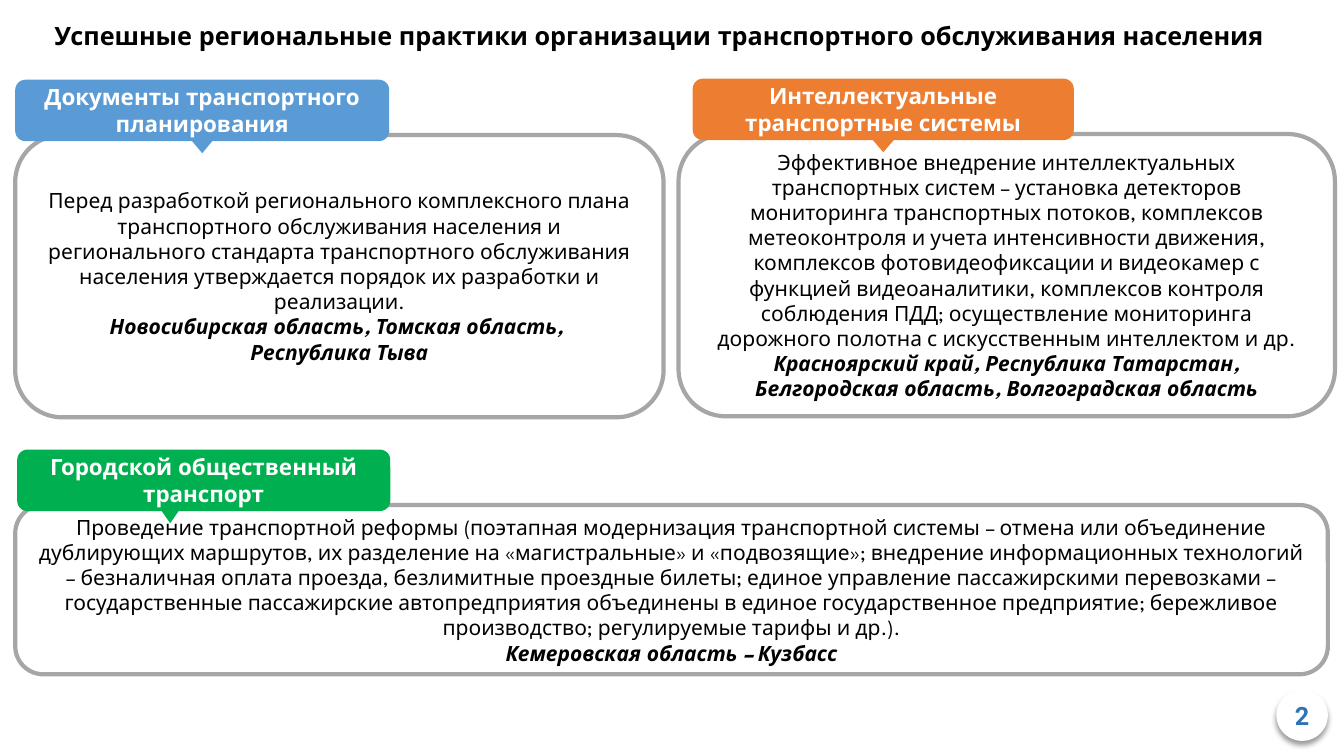
from copy import deepcopy

from lxml import etree
from pptx import Presentation
from pptx import util as u
from pptx.dml.color import RGBColor
from pptx.enum import shapes, text
from pptx.oxml import ns

THEME = {
    "font": "League Spartan", "number_font": "Roboto",
    "title": 18, "tag": 16, "body": 15, "number": 18, "outline": 3,
    "black": "000000", "white": "FFFFFF", "grey": "A6A6A6",
    "blue": "5B9BD5", "orange": "ED7D31", "green": "00B050", "number_blue": "2E75B6",
}

deck = Presentation()
deck.slide_width, deck.slide_height = u.Inches(13.33), u.Inches(7.5)
page = deck.slides.add_slide(deck.slide_layouts[6])


def place(left, top, width, height):
    """Turn percentages of the slide into lengths."""
    across, down = deck.slide_width / 100, deck.slide_height / 100
    return round(left * across), round(top * down), round(width * across), round(height * down)


def write(para, words, size, color="black", font="font", bold=False, italic=False):
    para.text = words
    para.alignment = text.PP_ALIGN.CENTER
    for span in para.runs:
        span.font.name, span.font.size = THEME[font], u.Pt(size)
        span.font.bold, span.font.italic = bold, italic
        span.font.color.rgb = RGBColor.from_string(THEME[color])
    # Line breaks take the size of the text around them
    for line_break in para._p.findall(ns.qn("a:br")):
        line_break.append(deepcopy(para.runs[0]._r.rPr))


# Title
title = page.shapes.add_textbox(*place(0, 1.73, 98.12, 5.73)).text_frame
title.word_wrap = True
title.auto_size = text.MSO_AUTO_SIZE.SHAPE_TO_FIT_TEXT
write(title.paragraphs[0],
      "Успешные региональные практики организации транспортного обслуживания населения",
      THEME["title"], bold=True)
title.paragraphs[0].line_spacing = 1.07
title.paragraphs[0].space_after = u.Pt(8)

# Practices: panel, tag (left, width), pointer (share of the tag, width), colour and words
practices = [
    ((1.13, 17.87, 48.24, 37.33), (1.13, 27.83), (0.5, 1.88), "blue",
     "Документы транспортного планирования",
     "Перед разработкой регионального комплексного плана транспортного обслуживания населения "
     "и регионального стандарта транспортного обслуживания населения утверждается порядок "
     "их разработки и реализации.",
     "Новосибирская область, Томская область, \nРеспублика Тыва"),
    ((50.49, 17.73, 48.84, 37.33), (51.54, 28.36), (0.5, 1.95), "orange",
     "Интеллектуальные транспортные системы",
     "Эффективное внедрение интеллектуальных транспортных систем – установка детекторов "
     "мониторинга транспортных потоков, комплексов метеоконтроля и учета интенсивности "
     "движения, комплексов фотовидеофиксации и видеокамер с функцией видеоаналитики, "
     "комплексов контроля соблюдения ПДД; осуществление мониторинга дорожного полотна "
     "с искусственным интеллектом и др.",
     "Красноярский край, Республика Татарстан, Белгородская область, Волгоградская область"),
    ((1.13, 66.8, 97.67, 22.4), (1.28, 27.76), (0.41, 1.58), "green",
     "Городской общественный транспорт",
     "Проведение транспортной реформы (поэтапная модернизация транспортной системы – отмена "
     "или объединение дублирующих маршрутов, их разделение на «магистральные» и «подвозящие»; "
     "внедрение информационных технологий – безналичная оплата проезда, безлимитные проездные "
     "билеты; единое управление пассажирскими перевозками – государственные пассажирские "
     "автопредприятия объединены в единое государственное предприятие; бережливое "
     "производство; регулируемые тарифы и др.).",
     "Кемеровская область – Кузбасс"),
]
for area, (tag_left, tag_width), (share, pointer_width), color, heading, story, regions in practices:
    # Outlined panel with the practice and its regions
    panel = page.shapes.add_shape(shapes.MSO_SHAPE.ROUNDED_RECTANGLE, *place(*area))
    panel.shadow.inherit = False
    panel.fill.background()
    panel.line.color.rgb = RGBColor.from_string(THEME["grey"])
    panel.line.width = u.Pt(THEME["outline"])
    write(panel.text_frame.paragraphs[0], story, THEME["body"])
    write(panel.text_frame.add_paragraph(), regions, THEME["body"], bold=True, italic=True)

    # Coloured tag with a pointer into the panel
    group = page.shapes.add_group_shape()
    tag = group.shapes.add_shape(shapes.MSO_SHAPE.FLOWCHART_ALTERNATE_PROCESS,
                                 *place(tag_left, area[1] - 7.33, tag_width, 8.13))
    pointer_left = tag_left + share * tag_width - pointer_width / 2
    pointer = group.shapes.add_shape(shapes.MSO_SHAPE.ISOSCELES_TRIANGLE,
                                     *place(pointer_left, area[1] + 0.4, pointer_width, 2))
    pointer.rotation = 180
    for part in (tag, pointer):
        part.shadow.inherit = False
        part.fill.solid()
        part.fill.fore_color.rgb = RGBColor.from_string(THEME[color])
        part.line.fill.background()
    write(tag.text_frame.paragraphs[0], heading, THEME["tag"], "white", bold=True)

# Page number on a white disc with a soft shadow
badge = page.shapes.add_shape(shapes.MSO_SHAPE.OVAL, *place(94.97, 91.2, 3.83, 6.8))
badge.fill.solid()
badge.fill.fore_color.rgb = RGBColor.from_string(THEME["white"])
badge.line.fill.background()
badge.shadow.inherit = False
effects = badge._element.spPr.find(ns.qn("a:effectLst"))
shadow = etree.SubElement(effects, ns.qn("a:outerShdw"), blurRad=str(u.Pt(4)),
                          dist=str(u.Pt(3)), dir="5400000", algn="t", rotWithShape="0")
shade = etree.SubElement(shadow, ns.qn("a:srgbClr"), val=THEME["black"])
etree.SubElement(shade, ns.qn("a:alpha"), val="40000")
write(badge.text_frame.paragraphs[0], "2", THEME["number"], "number_blue", "number_font", bold=True)

deck.save("out.pptx")
